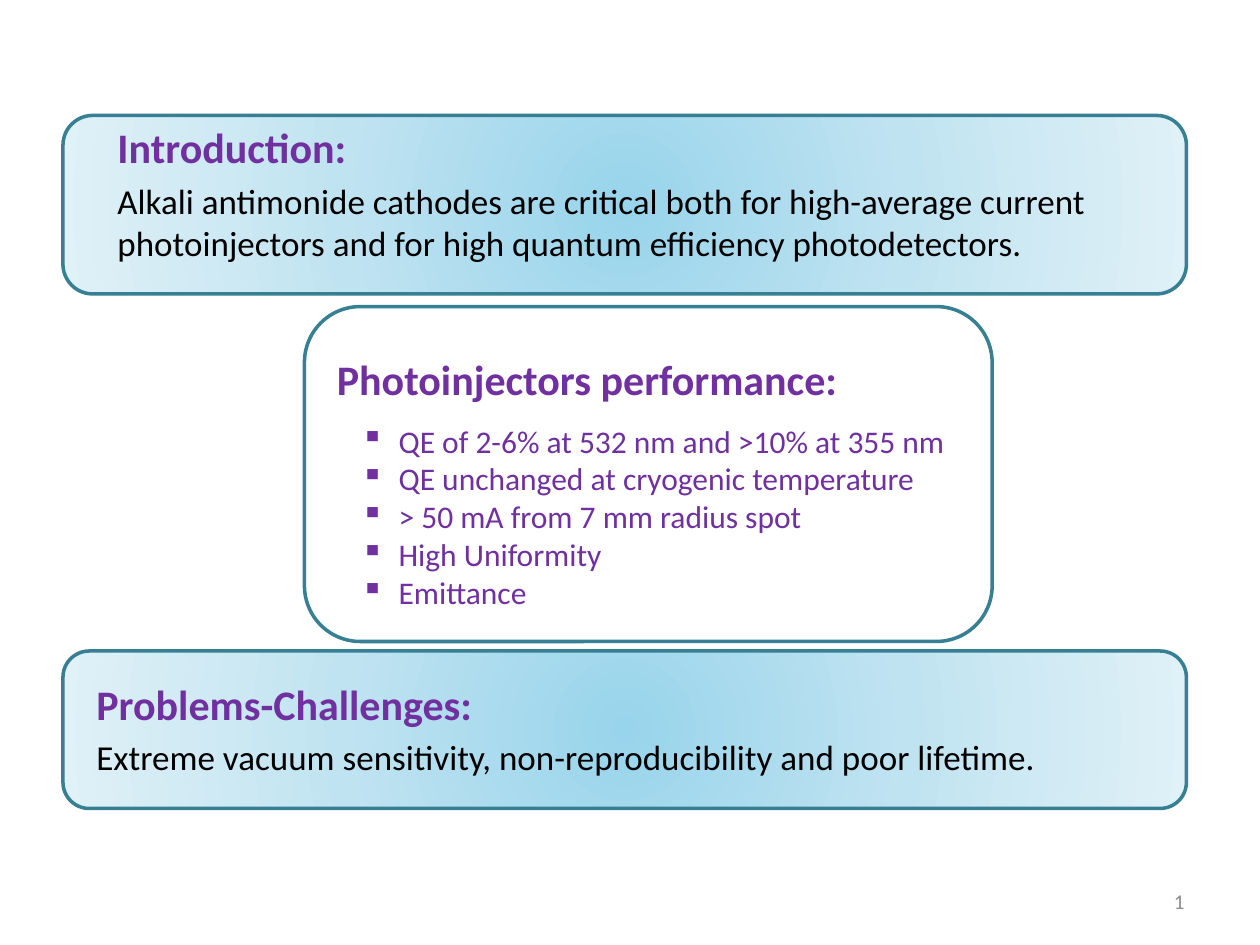
from dataclasses import dataclass

from lxml import etree
from pptx import Presentation
from pptx.dml.color import RGBColor
from pptx.enum.shapes import MSO_SHAPE
from pptx.enum.text import MSO_ANCHOR, PP_ALIGN
from pptx.oxml import parse_xml
from pptx.oxml.ns import nsdecls, qn
from pptx.util import Inches, Pt

ROUND = MSO_SHAPE.ROUNDED_RECTANGLE
MIDDLE, RIGHT = MSO_ANCHOR.MIDDLE, PP_ALIGN.RIGHT
COLS, ROWS = 120, 90


@dataclass(frozen=True)
class Theme:
    face: str = "Calibri"
    edge: str = "377F92"
    accent: str = "7030A0"
    ink: str = "000000"
    grey: str = "8C8C8C"
    glow: tuple = ((0, "98D4EB"), (50, "C0E3F1"), (100, "E0F1F7"))
    head: int = 24
    body: int = 20
    item: int = 18
    foot: int = 12


class Deck:
    def __init__(self, theme):
        self.theme = theme
        self.prs = Presentation()
        self.prs.slide_width, self.prs.slide_height = Inches(10), Inches(7.5)
        self.slide = self.prs.slides.add_slide(self.prs.slide_layouts[6])

    def place(self, col, row, wide, high):
        """Turn grid units into slide lengths."""
        dx, dy = self.prs.slide_width / COLS, self.prs.slide_height / ROWS
        return [round(n) for n in (col * dx, row * dy, wide * dx, high * dy)]

    def panel(self, *cell, glow=False):
        box = self.slide.shapes.add_shape(ROUND, *self.place(*cell))
        box.shadow.inherit = False
        box.line.color.rgb = RGBColor.from_string(self.theme.edge)
        box.line.width = Pt(2)
        box.fill.background()
        if glow:
            self.radiate(box)

    def radiate(self, box):
        """Fill a shape with a gradient that spreads from its centre."""
        stops = "".join(
            f'<a:gs pos="{pos * 1000}"><a:srgbClr val="{tint}"/></a:gs>'
            for pos, tint in self.theme.glow)
        grad = parse_xml(
            f'<a:gradFill {nsdecls("a")} rotWithShape="1"><a:gsLst>{stops}</a:gsLst>'
            '<a:path path="circle"><a:fillToRect l="50000" t="50000" '
            'r="50000" b="50000"/></a:path></a:gradFill>')
        props = box.element.spPr
        props.replace(props.find(qn("a:noFill")), grad)

    def frame(self, *cell):
        frame = self.slide.shapes.add_textbox(*self.place(*cell)).text_frame
        frame.word_wrap = True
        return frame

    def style(self, para, size, color, bold=False, **gaps):
        font = para.font
        looks = {"name": self.theme.face, "size": Pt(size), "bold": bold}
        for key, value in looks.items():
            setattr(font, key, value)
        font.color.rgb = RGBColor.from_string(color)
        for key, value in gaps.items():
            setattr(para, key, value)
        for run in para.runs:
            for key, value in looks.items():
                setattr(run.font, key, value)
            run.font.color.rgb = RGBColor.from_string(color)

    def heading(self, frame, text, **gaps):
        para = frame.paragraphs[0]
        para.add_run().text = text
        self.style(para, self.theme.head, self.theme.accent, True, **gaps)

    def section(self, title, text, *cell):
        frame = self.frame(*cell)
        self.heading(frame, title)
        para = frame.add_paragraph()
        para.add_run().text = text
        self.style(para, self.theme.body, self.theme.ink, space_before=Pt(4))

    def points(self, title, items, *cell):
        frame = self.frame(*cell)
        self.heading(frame, title, space_after=Pt(10))
        for item in items:
            para = frame.add_paragraph()
            para.add_run().text = item
            props = para._p.get_or_add_pPr()
            props.set("marL", str(Inches(0.49)))
            props.set("indent", str(-Inches(0.3)))
            etree.SubElement(props, qn("a:buChar")).set("char", "▪")
            self.style(para, self.theme.item, self.theme.accent)

    def number(self, text, *cell):
        frame = self.frame(*cell)
        frame.vertical_anchor = MIDDLE
        para = frame.paragraphs[0]
        para.alignment = RIGHT
        look = self.theme
        para._p.append(parse_xml(
            f'<a:fld {nsdecls("a")} id="{{B6F15528-21DE-4FAA-801E-634DDDAF4B2B}}" '
            f'type="slidenum"><a:rPr lang="en-US" sz="{look.foot * 100}"><a:solidFill>'
            f'<a:srgbClr val="{look.grey}"/></a:solidFill><a:latin typeface="{look.face}"/>'
            f'</a:rPr><a:t>{text}</a:t></a:fld>'))


def main():
    deck = Deck(Theme())
    deck.panel(6, 11, 107, 17, glow=True)
    deck.section(
        "Introduction:",
        "Alkali antimonide cathodes are critical both for high-average current "
        "photoinjectors and for high quantum efficiency photodetectors.",
        10, 11, 100, 18)
    deck.number(2, 86, 83.4, 28, 4.8)
    deck.panel(6, 62, 107, 15, glow=True)
    deck.section(
        "Problems-Challenges:",
        "Extreme vacuum sensitivity, non-reproducibility and poor lifetime.",
        8, 64, 104, 11)
    deck.points(
        "Photoinjectors performance:",
        ["QE of 2-6% at 532 nm and >10% at 355 nm",
         "QE unchanged at cryogenic temperature",
         "> 50 mA from 7 mm radius spot",
         "High Uniformity",
         "Emittance"],
        30.9, 33.1, 63.6, 25.8)
    deck.panel(29, 29.2, 65.5, 31.9)
    deck.prs.save("out.pptx")


if __name__ == "__main__":
    main()
